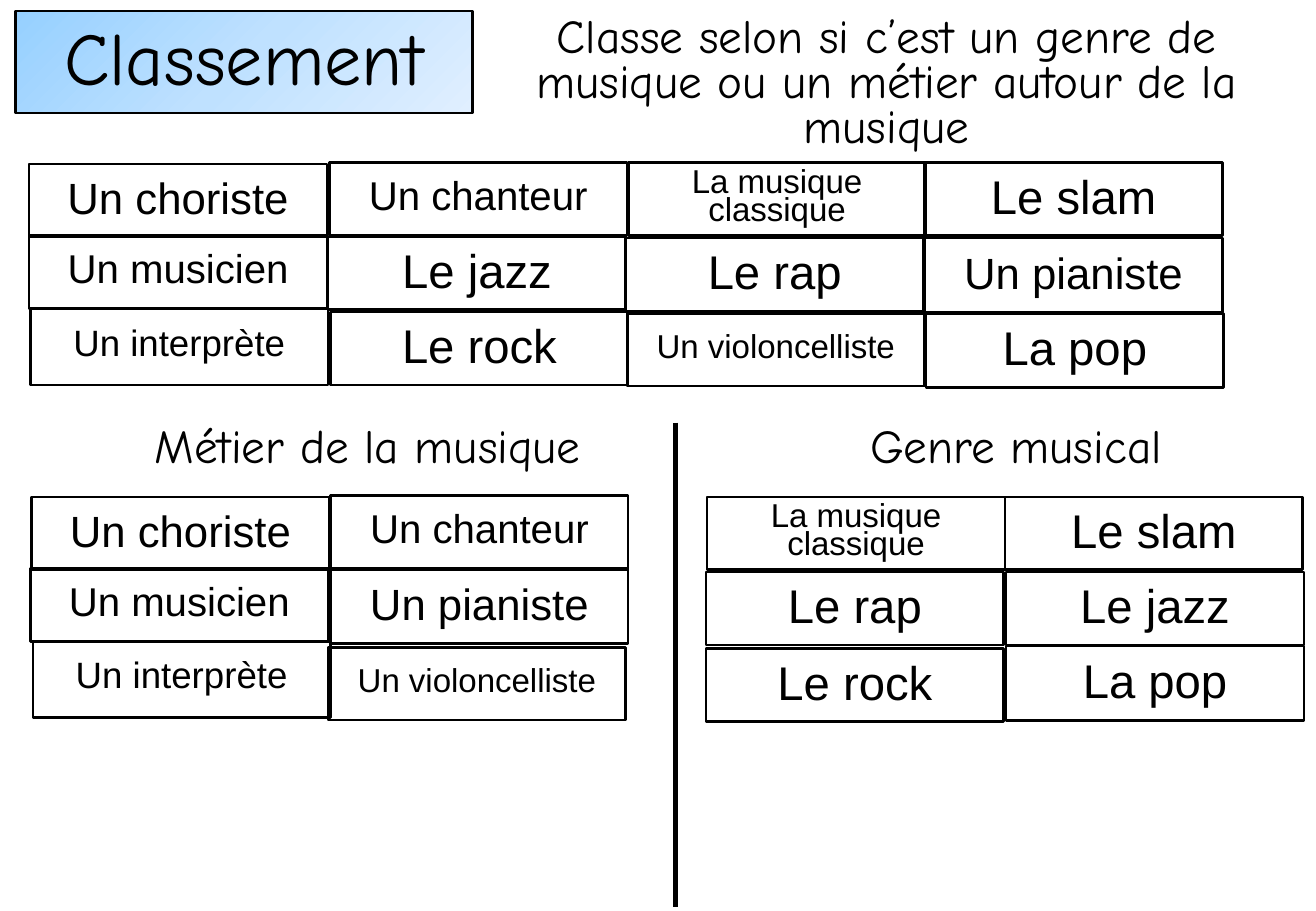
from copy import deepcopy

from pptx import Presentation
from pptx.dml.color import RGBColor
from pptx.enum import shapes, text
from pptx.oxml import ns
from pptx.util import Inches, Pt

COLORS = {"ink": "000000", "sky": "96D0FF", "mid": "BFE1FF", "pale": "E0EFFF"}
HEADING_FONT = "Comic Neue"
LABEL_FONT = "Arial"
LABEL_WIDTH = 2.45

# Label: font size, line spacing, box height
LABELS = {
    "Un choriste": (25.9, 0.9, 0.6),
    "Un chanteur": (23.8, 0.8, 0.6),
    "Un musicien": (23.8, 0.8, 0.6),
    "Un pianiste": (25.9, 0.9, 0.61),
    "Un interprète": (21.7, 0.7, 0.63),
    "Un violoncelliste": (19.6, 0.7, 0.6),
    "La musique classique": (19.6, 0.7, 0.6),
    "Le slam": (28, 0.9, 0.6),
    "Le rap": (28, 0.9, 0.6),
    "Le jazz": (28, 0.9, 0.6),
    "Le rock": (28, 0.9, 0.6),
    "La pop": (28, 0.9, 0.61),
}

# Hand-placed labels: text, left, top
WORD_BANK = [
    ("Le jazz", 2.7, 1.95), ("Un chanteur", 2.71, 1.34),
    ("Un musicien", 0.24, 1.94), ("Un choriste", 0.24, 1.35),
    ("Le slam", 7.61, 1.34), ("La musique classique", 5.17, 1.34),
    ("Un pianiste", 7.61, 1.96), ("Le rap", 5.15, 1.96),
    ("Le rock", 2.72, 2.57), ("Un interprète", 0.25, 2.54),
    ("La pop", 7.62, 2.58), ("Un violoncelliste", 5.16, 2.58),
]
TRADES = [
    ("Un chanteur", 2.72, 4.08), ("Un musicien", 0.25, 4.68),
    ("Un choriste", 0.26, 4.09), ("Un pianiste", 2.72, 4.69),
    ("Un interprète", 0.27, 5.28), ("Un violoncelliste", 2.7, 5.33),
]
GENRES = [
    ("Le jazz", 8.28, 4.71), ("Le slam", 8.27, 4.09),
    ("La musique classique", 5.82, 4.09), ("Le rap", 5.81, 4.71),
    ("Le rock", 5.81, 5.34), ("La pop", 8.28, 5.32),
]

deck = Presentation()
deck.slide_width, deck.slide_height = Inches(10.83), Inches(7.5)
page = deck.slides.add_slide(deck.slide_layouts[6])


def add_text(words, left, top, width, height, size=28, font=HEADING_FONT,
             spacing=0.9, before=10, framed=False):
    """Add centred text, in an outlined rectangle if framed."""
    area = [Inches(value) for value in (left, top, width, height)]
    if framed:
        box = page.shapes.add_shape(shapes.MSO_SHAPE.RECTANGLE, *area)
        box.shadow.inherit = False
        box.fill.background()
        box.line.color.rgb = RGBColor.from_string(COLORS["ink"])
        box.line.width = Pt(1.5)
    else:
        box = page.shapes.add_textbox(*area)
    frame = box.text_frame
    frame.word_wrap = True
    frame.vertical_anchor = (
        text.MSO_ANCHOR.MIDDLE if framed else text.MSO_ANCHOR.TOP)
    para = frame.paragraphs[0]
    para.alignment = text.PP_ALIGN.CENTER
    para.line_spacing = spacing
    para.space_before = Pt(before)
    span = para.add_run()
    span.text = words
    span.font.name = font
    span.font.size = Pt(size)
    span.font.color.rgb = RGBColor.from_string(COLORS["ink"])
    return box


# Title banner and instruction
banner = add_text("Classement", 0.13, 0.09, 3.76, 0.84,
                  size=44, before=0, framed=True)
banner.fill.gradient()
banner.fill.gradient_angle = 315
stop_list = banner._element.spPr.find(".//" + ns.qn("a:gsLst"))
stop_list.insert(1, deepcopy(stop_list[0]))
for stop, name, position in zip(banner.fill.gradient_stops,
                                ("sky", "mid", "pale"), (0, 0.5, 1)):
    stop.color.rgb = RGBColor.from_string(COLORS[name])
    stop.position = position

add_text("Classe selon si c’est un genre de musique ou un métier autour de la musique",
         3.89, 0.09, 6.81, 1.25, spacing=0.8)

# Column headings and divider
add_text("Métier de la musique", 0.74, 3.43, 4.57, 0.96)
add_text("Genre musical", 6.29, 3.43, 4.14, 0.96)
divider = page.shapes.add_connector(
    shapes.MSO_CONNECTOR.STRAIGHT,
    Inches(5.56), Inches(3.48), Inches(5.56), Inches(7.47))
divider.line.color.rgb = RGBColor.from_string(COLORS["ink"])
divider.line.width = Pt(3)
divider_properties = divider._element.spPr
divider_properties.append(
    divider_properties.makeelement(ns.qn("a:effectLst"), {}))

# Words to sort, then the sorted words
for label, left, top in WORD_BANK + TRADES + GENRES:
    size, spacing, height = LABELS[label]
    add_text(label, left, top, LABEL_WIDTH, height, size=size,
             font=LABEL_FONT, spacing=spacing, framed=True)

deck.save("out.pptx")
